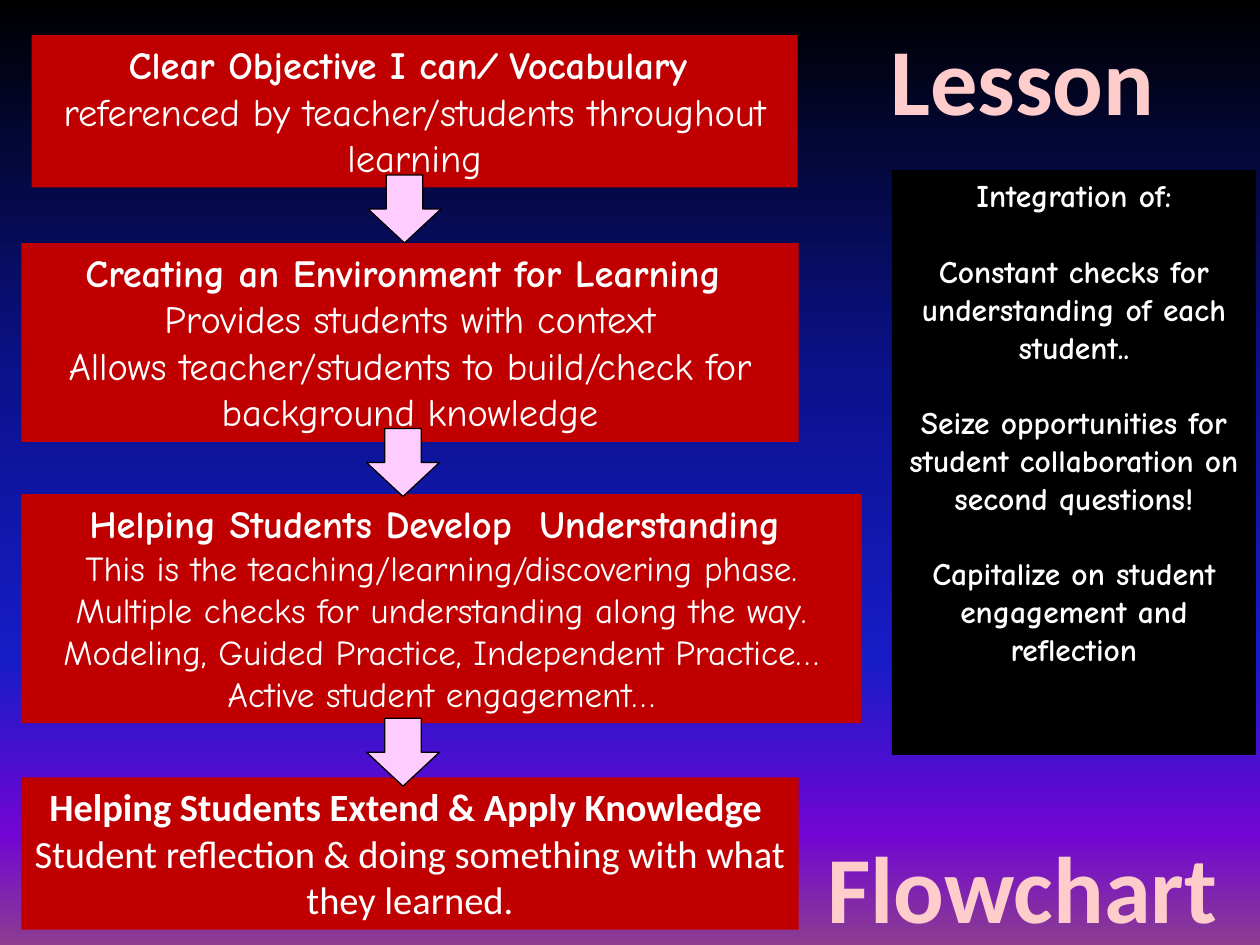
from dataclasses import dataclass

from lxml import etree
from pptx import Presentation
from pptx import util as u
from pptx.dml.color import RGBColor
from pptx.enum import shapes, text
from pptx.oxml.ns import qn


@dataclass(frozen=True)
class Theme:
    red: str = "C00000"
    pink: str = "FFCCFF"
    rose: str = "FFCCCC"
    black: str = "000000"
    white: str = "FFFFFF"
    sky: tuple = ((0, "000000"), (40, "0A128C"), (70, "181CC7"),
                  (88, "7005D4"), (100, "8C3D91"))
    hand: str = "Comic Neue"
    plain: str = "Calibri"
    title: int = 54
    head: int = 22
    body: int = 20
    side: int = 18
    gap: float = 21.6


class Deck:
    def __init__(self, theme):
        self.theme = theme
        self.prs = Presentation()
        self.prs.slide_width, self.prs.slide_height = u.Cm(25.4), u.Cm(19.05)
        self.slide = self.prs.slides.add_slide(self.prs.slide_layouts[6])

    def sky(self):
        fill = self.slide.background.fill
        fill.gradient()
        fill.gradient_angle = 270
        stops = next(self.slide.element.iter(qn("a:gsLst")))
        for stop in list(stops):
            stops.remove(stop)
        for pos, color in self.theme.sky:
            stop = etree.SubElement(stops, qn("a:gs"), pos=str(pos * 1000))
            etree.SubElement(stop, qn("a:srgbClr"), val=color)

    def line(self, para, runs, size, font, bold, color):
        para.alignment = text.PP_ALIGN.CENTER
        para.font.size, para.font.name = u.Pt(size), font
        para.font.bold = bold
        para.font.color.rgb = RGBColor.from_string(color)
        for words in runs:
            para.add_run().text = words

    def shape(self, kind, box, color):
        item = self.slide.shapes.add_shape(kind, *map(u.Cm, box))
        item.shadow.inherit = False
        item.fill.solid()
        item.fill.fore_color.rgb = RGBColor.from_string(color)
        item.line.fill.background()
        return item

    def panel(self, box, color):
        frame = self.shape(shapes.MSO_SHAPE.RECTANGLE, box, color).text_frame
        frame.word_wrap = True
        frame.vertical_anchor = text.MSO_ANCHOR.TOP
        return frame

    def step(self, box, head, lines, font, size):
        frame = self.panel(box, self.theme.red)
        white = self.theme.white
        self.line(frame.paragraphs[0], head, self.theme.head, font, True, white)
        for words in lines:
            self.line(frame.add_paragraph(), [words], size, font, False, white)
        return frame

    def arrow(self, left, top):
        item = self.shape(shapes.MSO_SHAPE.DOWN_ARROW,
                          (left, top, 1.47, 1.37), self.theme.pink)
        item.line.color.rgb = RGBColor.from_string(self.theme.black)
        item.line.width = u.Pt(0.75)

    def notes(self, box, lines):
        t = self.theme
        frame = self.panel(box, t.black)
        for i, words in enumerate(lines):
            para = frame.add_paragraph() if i else frame.paragraphs[0]
            self.line(para, [words], t.side, t.hand, True, t.white)
            para.space_before = u.Pt(t.gap if i else 0)

    def title(self, top, words):
        t = self.theme
        box = self.slide.shapes.add_textbox(*map(u.Cm, (16.38, top, 8.46, 2.58)))
        box.text_frame.word_wrap = True
        self.line(box.text_frame.paragraphs[0], [words],
                  t.title, t.plain, True, t.rose)


def main():
    t = Theme()
    deck = Deck(t)
    deck.sky()
    deck.title(0.3, "Lesson")
    deck.title(16.59, "Flowchart")

    goal = deck.step((0.64, 0.71, 15.44, 3.07),
                     ["Clear Objective I can", "/ ", "Vocabulary "],
                     ["referenced by teacher/students throughout learning"],
                     t.hand, t.head)
    goal.paragraphs[0].runs[1].font.italic = True
    deck.step((0.43, 4.9, 15.67, 4.01),
              ["Creating an Environment for Learning "],
              ["Provides students with context",
               "Allows teacher/students to build/check for background knowledge"],
              t.hand, t.head)
    deck.step((0.43, 9.96, 16.94, 4.62),
              ["Helping Students Develop  Understanding "],
              ["This is the teaching/learning/discovering phase. "
               "Multiple checks for understanding along the way. "
               "Modeling, Guided Practice, Independent Practice…"
               "Active student engagement…"],
              t.hand, t.body)
    deck.step((0.43, 15.67, 15.67, 3.07),
              ["Helping Students Extend & Apply Knowledge "],
              ["Student reflection & doing something with what they learned."],
              t.plain, t.head)

    for left, top in ((7.42, 3.53), (7.39, 8.64), (7.39, 14.48)):
        deck.arrow(left, top)

    deck.notes((17.98, 3.43, 7.34, 11.79),
               ["Integration of:",
                "Constant checks for understanding of each student..",
                "Seize opportunities for student collaboration on second questions!",
                "Capitalize on student engagement and reflection"])
    deck.prs.save("out.pptx")


if __name__ == "__main__":
    main()
